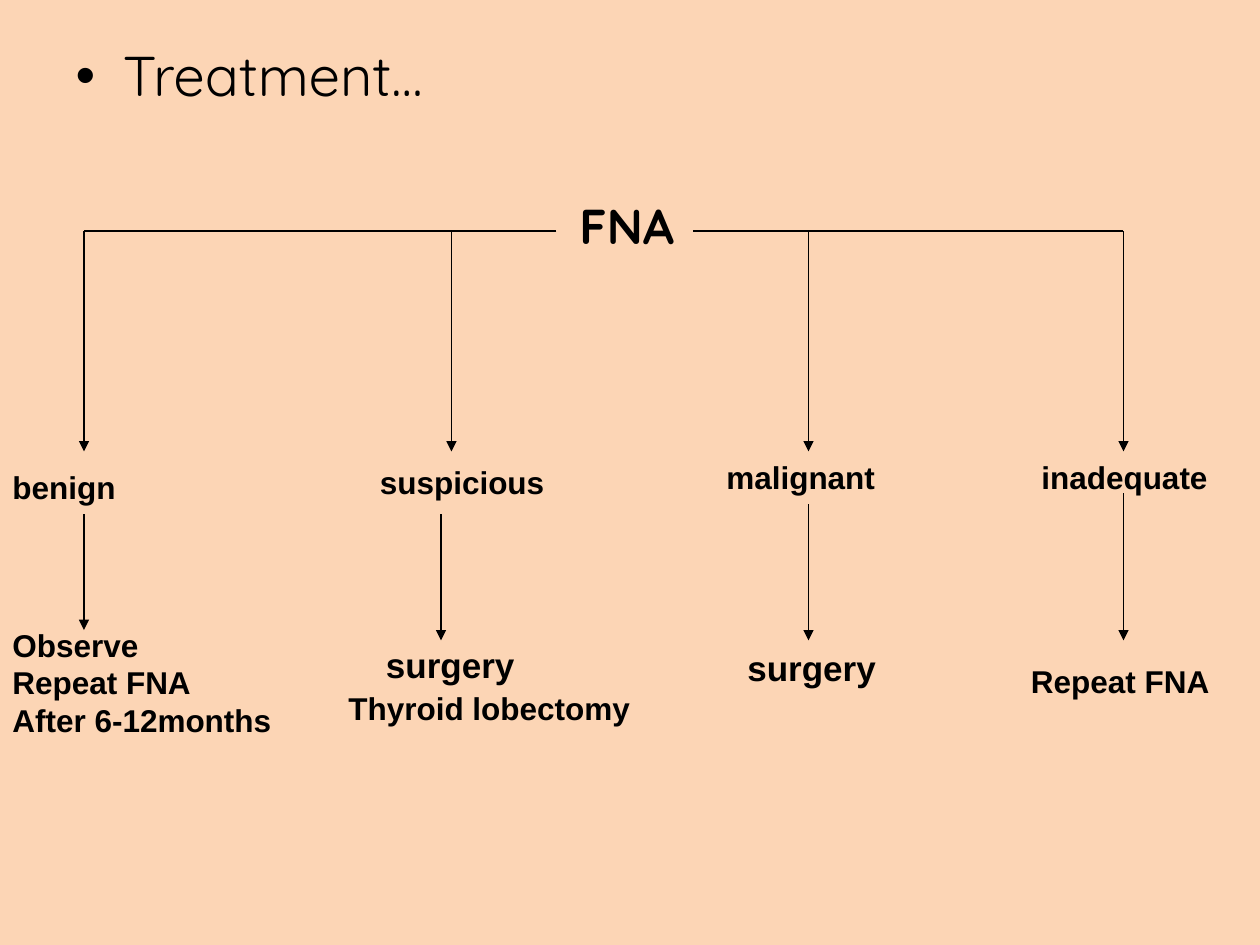
import pptx
import pptx.dml.color
import pptx.enum.shapes
import pptx.enum.text
import pptx.oxml.ns
import pptx.util
from lxml import etree

Pt = pptx.util.Pt
INK = "000000"
PEACH = "FCD5B5"

BUS_Y = 132
BRANCH_END = 258
ROOT_GAP = (318, 396)

# Each branch: x of its arrow, result (text, left, top, width),
# second arrow (x, top, bottom), actions (lines, left, top, width, size)
BRANCHES = [
    (48, ("benign", 0, 264, 73.5), (48, 294, 360),
     [(["Observe", "Repeat FNA", "After 6-12months"], 0, 354, 163, 18)]),
    (258, ("suspicious", 210, 261, 108.5), (252, 294, 366),
     [(["surgery"], 213.5, 364, 88, 20),
      (["Thyroid lobectomy"], 192, 390, 175.5, 18)]),
    (462, ("malignant", 408, 258, 99.5), (462, 288, 366),
     [(["surgery"], 420, 366, 88, 20)]),
    (642, ("inadequate", 588, 258, 109.5), (642, 282, 366),
     [(["Repeat FNA"], 582, 375, 116.5, 18)]),
]


def paint(color_format, hex_color):
    color_format.rgb = pptx.dml.color.RGBColor.from_string(hex_color)


def add_child(parent, tag, **attributes):
    return etree.SubElement(parent, pptx.oxml.ns.qn(tag), attributes)


def style(paragraph, font_name, size, bold):
    paragraph.font.name = font_name
    paragraph.font.size = Pt(size)
    paragraph.font.bold = bold
    paint(paragraph.font.color, INK)


def add_title(slide, text):
    title = slide.shapes.title
    title.left, title.top, title.width, title.height = Pt(36), Pt(24), Pt(648), Pt(90)
    frame = title.text_frame
    frame.text = text
    frame.auto_size = pptx.enum.text.MSO_AUTO_SIZE.NONE
    frame.vertical_anchor = pptx.enum.text.MSO_ANCHOR.TOP
    heading = frame.paragraphs[0]
    heading.alignment = pptx.enum.text.PP_ALIGN.LEFT
    heading.line_spacing = 0.9
    heading.space_before = Pt(6.4)
    # Bullet with a hanging indent
    properties = heading._p.get_or_add_pPr()
    properties.set("marL", str(Pt(27)))
    properties.set("indent", str(Pt(-27)))
    add_child(properties, "a:buFont", typeface="Arial")
    add_child(properties, "a:buChar", char="•")
    style(heading, "Quicksand", 32, False)


def add_label(slide, lines, left, top, width, size=18, font_name="Arial"):
    height = 7.2 + 1.2 * size * len(lines)
    label = slide.shapes.add_textbox(Pt(left), Pt(top), Pt(width), Pt(height))
    frame = label.text_frame
    frame.text = "\n".join(lines)
    frame.word_wrap = False
    frame.auto_size = pptx.enum.text.MSO_AUTO_SIZE.SHAPE_TO_FIT_TEXT
    for paragraph in frame.paragraphs:
        style(paragraph, font_name, size, True)


def add_line(slide, x1, y1, x2, y2, arrow=False):
    line = slide.shapes.add_connector(
        pptx.enum.shapes.MSO_CONNECTOR.STRAIGHT, Pt(x1), Pt(y1), Pt(x2), Pt(y2))
    line.line.width = Pt(0.75)
    paint(line.line.color, INK)
    if arrow:
        add_child(line.line._get_or_add_ln(), "a:tailEnd", type="triangle")
    add_child(line._element.spPr, "a:effectLst")


def main():
    deck = pptx.Presentation()
    deck.slide_width, deck.slide_height = Pt(720), Pt(540)
    slide = deck.slides.add_slide(deck.slide_layouts.get_by_name("Title Only"))
    slide.background.fill.solid()
    paint(slide.background.fill.fore_color, PEACH)

    add_title(slide, "Treatment…")

    # Root of the tree and the lines to its outer branches
    add_label(slide, ["FNA"], 324, 108, 72.5, 28, "Quicksand")
    add_line(slide, ROOT_GAP[1], BUS_Y, BRANCHES[-1][0], BUS_Y)
    add_line(slide, ROOT_GAP[0], BUS_Y, BRANCHES[0][0], BUS_Y)

    # Branches: result, then what to do about it
    for x, (result, left, top, width), (step_x, start, end), actions in BRANCHES:
        add_line(slide, x, BUS_Y, x, BRANCH_END, arrow=True)
        add_label(slide, [result], left, top, width)
        add_line(slide, step_x, start, step_x, end, arrow=True)
        for action in actions:
            add_label(slide, *action)

    deck.save("out.pptx")


if __name__ == "__main__":
    main()
